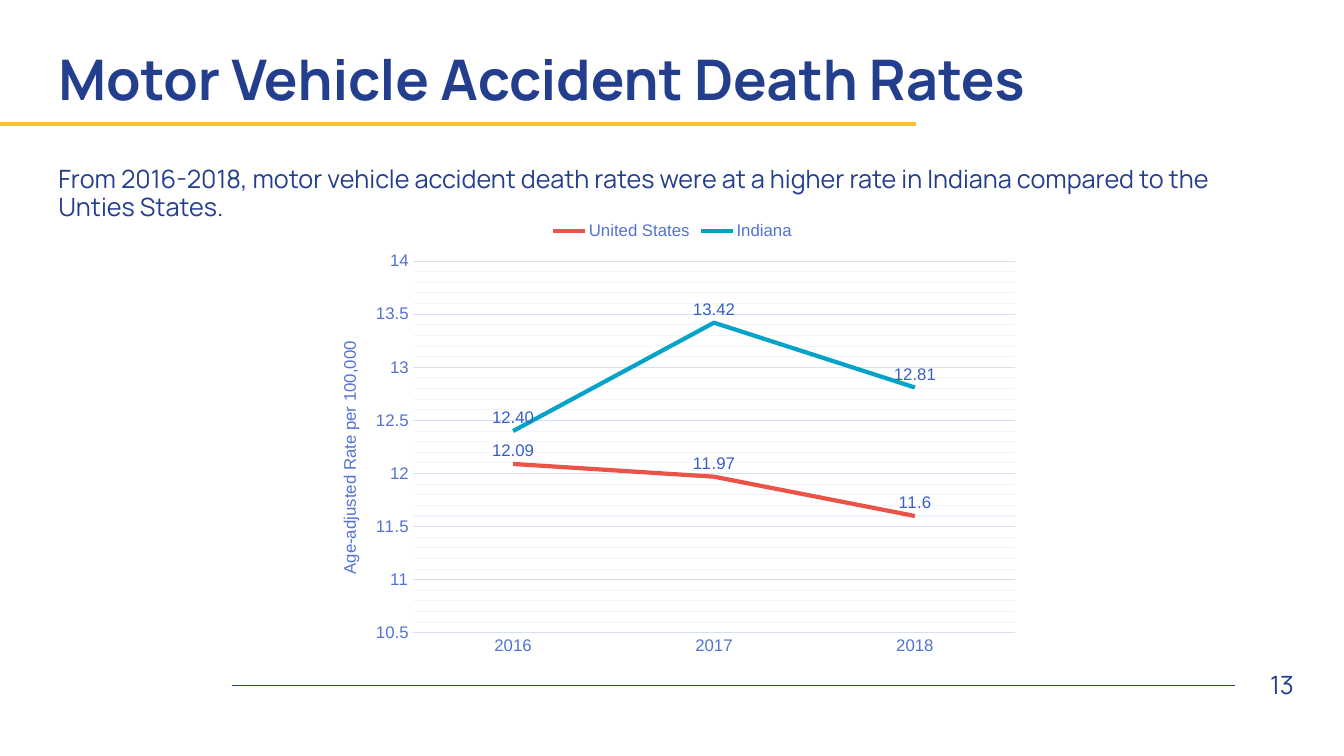
"""Build a slide with a line chart of motor vehicle accident death rates."""
from lxml import etree
from pptx import Presentation
from pptx.chart.data import CategoryChartData
from pptx.dml.color import RGBColor
from pptx.enum import chart as charts, shapes, text
from pptx.oxml import ns
from pptx.util import Inches, Pt

COLORS = {
    "navy": "243E8E", "gold": "F7C327", "axis": "5372D3", "label": "385DCD",
    "grid": "D7DFF5", "minor_grid": "F1F4FC", "red": "EB5347", "teal": "06A3C9",
}
SERIES = [
    ("United States", (12.09, 11.97, 11.6), "red", "General"),
    ("Indiana", (12.40, 13.42, 12.81), "teal", "0.00"),
]


def color(name):
    return RGBColor.from_string(COLORS[name])


def set_values(target, values):
    for name, value in values.items():
        setattr(target, name, value)


def format_font(font, size, color_name, name="Arial", bold=False):
    set_values(font, {"size": Pt(size), "name": name, "bold": bold})
    font.color.rgb = color(color_name)


def format_line(line, color_name, width):
    line.color.rgb = color(color_name)
    line.width = Pt(width)


def add_text(slide, content, box, size, frame_format, paragraph_format, bold=False):
    frame = slide.shapes.add_textbox(*map(Inches, box)).text_frame
    set_values(frame, {"word_wrap": True, **frame_format})
    paragraph = frame.paragraphs[0]
    paragraph.text = content
    set_values(paragraph, paragraph_format)
    format_font(paragraph.runs[0].font, size, "navy", "Manrope", bold)


def add_rule(slide, left, right, top, color_name, width):
    connector = slide.shapes.add_connector(
        shapes.MSO_CONNECTOR.STRAIGHT, *map(Inches, (left, top, right, top)))
    format_line(connector.line, color_name, width)
    etree.SubElement(connector._element.spPr, ns.qn("a:effectLst"))


def set_layout(element, index, values):
    """Place a chart part by fractions of the chart area."""
    for old in element.findall(ns.qn("c:layout")):
        element.remove(old)
    layout = etree.Element(ns.qn("c:layout"))
    manual = etree.SubElement(layout, ns.qn("c:manualLayout"))
    for name, value in values.items():
        etree.SubElement(manual, ns.qn(f"c:{name}")).set("val", str(value))
    element.insert(index, layout)


def format_axes(chart):
    category_axis, value_axis = chart.category_axis, chart.value_axis
    for axis in (category_axis, value_axis):
        set_values(axis, {"major_tick_mark": charts.XL_TICK_MARK.NONE,
                          "minor_tick_mark": charts.XL_TICK_MARK.NONE})
        format_font(axis.tick_labels.font, 12, "axis")
    format_line(category_axis.format.line, "grid", 0.75)
    set_values(value_axis, {
        "minimum_scale": 10.5, "maximum_scale": 14, "major_unit": 0.5, "minor_unit": 0.1,
        "has_major_gridlines": True, "has_minor_gridlines": True})
    set_values(value_axis.tick_labels, {"number_format": "General",
                                        "number_format_is_linked": False})
    value_axis.format.line.fill.background()
    format_line(value_axis.major_gridlines.format.line, "grid", 0.75)
    minor = etree.SubElement(
        value_axis._element.find(ns.qn("c:minorGridlines")), ns.qn("c:spPr"))
    line = etree.SubElement(minor, ns.qn("a:ln"), w=str(Pt(0.75)))
    fill = etree.SubElement(line, ns.qn("a:solidFill"))
    etree.SubElement(fill, ns.qn("a:srgbClr"), val=COLORS["minor_grid"])
    title = value_axis.axis_title
    title.text_frame.text = "Age-adjusted Rate per 100,000"
    format_font(title.text_frame.paragraphs[0].runs[0].font, 12, "axis")
    set_layout(title._element, 1, {"xMode": "edge", "yMode": "edge", "x": 0.03, "y": 0.28})


def format_series(series, color_name, number_format):
    series.smooth = False
    series.marker.style = charts.XL_MARKER_STYLE.NONE
    format_line(series.format.line, color_name, 3)
    labels = series.data_labels
    set_values(labels, {
        "show_value": True, "position": charts.XL_LABEL_POSITION.ABOVE,
        "number_format": number_format, "number_format_is_linked": False})
    format_font(labels.font, 12, "label")


def add_rate_chart(slide, box):
    data = CategoryChartData()
    data.categories = ["2016", "2017", "2018"]
    for name, values, *_ in SERIES:
        data.add_series(name, values)
    chart = slide.shapes.add_chart(
        charts.XL_CHART_TYPE.LINE, *map(Inches, box), data).chart
    set_values(chart, {"has_title": False, "has_legend": True})
    format_font(chart.font, 10, "navy")
    set_values(chart.legend, {"position": charts.XL_LEGEND_POSITION.TOP,
                              "include_in_layout": False})
    format_font(chart.legend.font, 12, "axis")
    format_axes(chart)
    plot = chart.plots[0]
    plot.vary_by_categories = False
    for series, (_, _, color_name, number_format) in zip(plot.series, SERIES):
        format_series(series, color_name, number_format)
    plot_area = chart._chartSpace.chart.plotArea
    set_layout(plot_area, 0, {
        "layoutTarget": "inner", "xMode": "edge", "yMode": "edge",
        "x": 0.137, "y": 0.111, "w": 0.842, "h": 0.818})


def main():
    presentation = Presentation()
    set_values(presentation, {"slide_width": Inches(13.33), "slide_height": Inches(7.5)})
    slide = presentation.slides.add_slide(presentation.slide_layouts[6])
    middle = {"vertical_anchor": text.MSO_ANCHOR.MIDDLE}
    add_rule(slide, 2.3, 12.25, 6.8, "navy", 1)
    add_rule(slide, 0, 9.09, 1.23, "gold", 3)
    add_text(slide, "Motor Vehicle Accident Death Rates", (0.48, 0.4, 11.94, 0.83),
             40, middle, {"line_spacing": 0.9}, bold=True)
    add_text(slide, "From 2016-2018, motor vehicle accident death rates were at a higher "
             "rate in Indiana compared to the Unties States.", (0.48, 1.61, 11.94, 4.54),
             18, {"vertical_anchor": text.MSO_ANCHOR.TOP}, {"line_spacing": 0.9})
    add_text(slide, "13", (12.25, 6.59, 0.68, 0.4), 18, middle,
             {"alignment": text.PP_ALIGN.RIGHT})
    add_rate_chart(slide, (3.12, 2.09, 7.1, 4.51))
    presentation.save("out.pptx")


if __name__ == "__main__":
    main()
